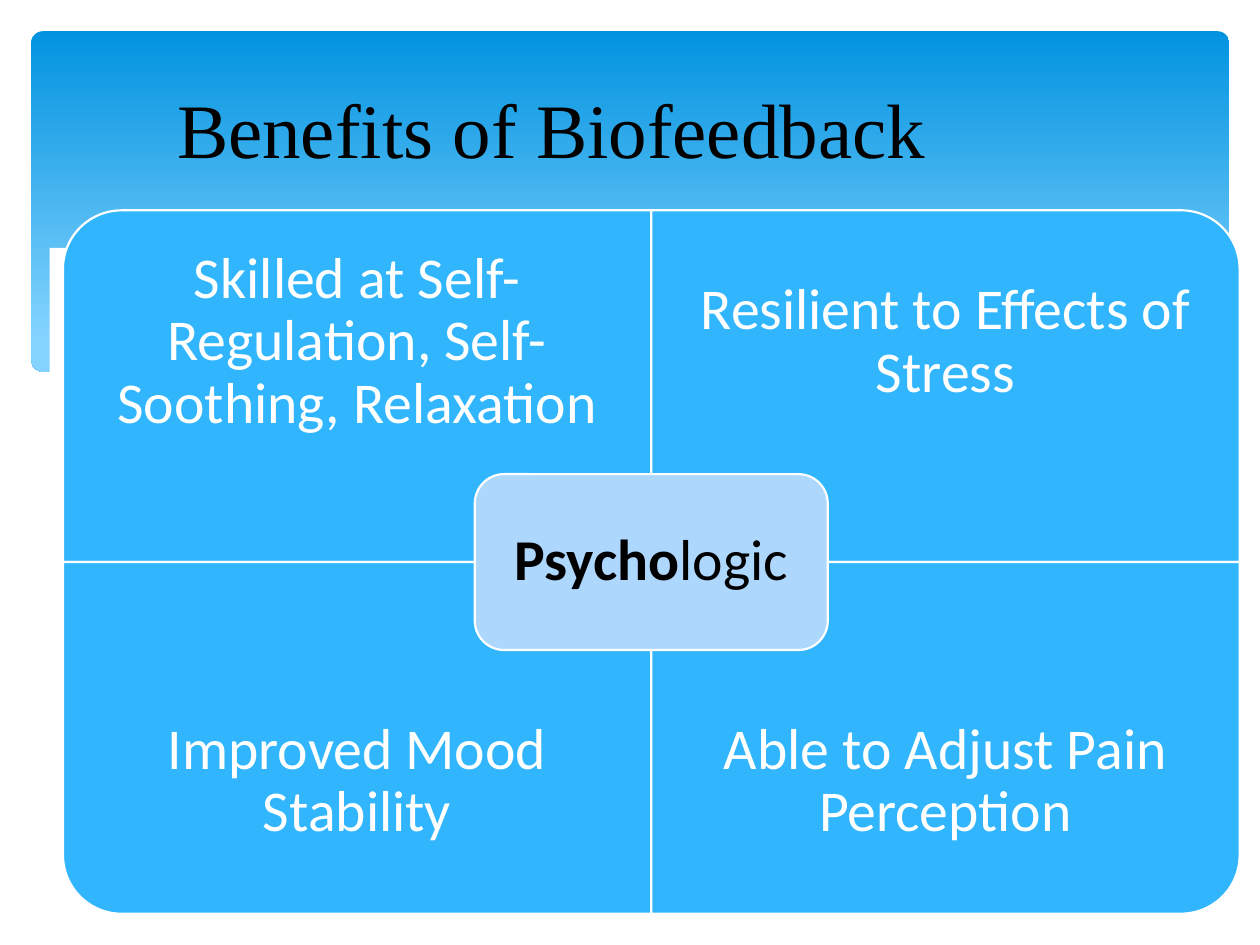
from dataclasses import dataclass

from pptx import Presentation
from pptx import util as u
from pptx.dml.color import RGBColor
from pptx.enum import shapes, text

COLORS = {
    "white": "FFFFFF",
    "black": "000000",
    "banner_top": "0293E0",
    "banner_bottom": "83D3FE",
    "quadrant": "31B6FD",
    "center": "AED7FE",
}
LEFT, TOP = 1.27, 4.24
WIDTH, HEIGHT = 11.86, 7.09
LABEL_HEIGHT = HEIGHT * 0.75
WAVE = [
    (0.58, 5.41), (0.91, 5.26), (1.32, 5.11), (1.9, 4.95), (2.69, 4.8),
    (3.71, 4.7), (4.9, 4.67), (6.35, 4.72), (8, 4.93), (9.93, 5.26),
    (12.07, 5.77), (14.1, 6.22), (15.9, 6.55), (17.98, 6.86), (20.55, 7.04),
    (22.23, 6.93), (23.62, 6.65), (24.82, 6.25), (24.82, 8.36), (0.58, 8.36),
]


@dataclass(frozen=True)
class Quadrant:
    label: str
    column: int
    row: int
    rotation: int


QUADRANTS = [
    Quadrant("Skilled at Self-Regulation, Self-Soothing, Relaxation", 0, 0, 270),
    Quadrant("Resilient to Effects of Stress", 1, 0, 0),
    Quadrant("Improved Mood Stability", 0, 1, 180),
    Quadrant("Able to Adjust Pain Perception", 1, 1, 90),
]


def color(name: str) -> RGBColor:
    return RGBColor.from_string(COLORS[name])


def add_panel(page, kind, left: float, top: float, width: float, height: float, fill: str):
    panel = page.shapes.add_shape(kind, u.Cm(left), u.Cm(top), u.Cm(width), u.Cm(height))
    panel.shadow.inherit = False
    panel.fill.solid()
    panel.fill.fore_color.rgb = color(fill)
    panel.line.color.rgb = color("white")
    panel.line.width = u.Pt(1.25)
    return panel


def add_label(page, spans: list[tuple[str, bool]], left: float, top: float,
              width: float, height: float, inset: float, ink: str) -> None:
    box = page.shapes.add_textbox(u.Cm(left), u.Cm(top), u.Cm(width), u.Cm(height))
    frame = box.text_frame
    frame.word_wrap = True
    frame.vertical_anchor = text.MSO_ANCHOR.MIDDLE
    frame.margin_left = frame.margin_right = u.Cm(inset)
    frame.margin_top = frame.margin_bottom = u.Cm(inset)
    para = frame.paragraphs[0]
    para.alignment = text.PP_ALIGN.CENTER
    para.line_spacing = 0.9
    for words, bold in spans:
        span = para.add_run()
        span.text = words
        span.font.name = "Calibri"
        span.font.size = u.Pt(33)
        span.font.bold = bold
        span.font.color.rgb = color(ink)


def add_quadrant(page, quadrant: Quadrant) -> None:
    left = LEFT + quadrant.column * WIDTH
    top = TOP + quadrant.row * HEIGHT
    sideways = quadrant.rotation % 180 == 90
    width, height = (HEIGHT, WIDTH) if sideways else (WIDTH, HEIGHT)
    panel = add_panel(page, shapes.MSO_SHAPE.ROUND_1_RECTANGLE,
                      left + (WIDTH - width) / 2, top + (HEIGHT - height) / 2,
                      width, height, "quadrant")
    panel.rotation = quadrant.rotation
    label_top = top + quadrant.row * (HEIGHT - LABEL_HEIGHT)
    add_label(page, [(quadrant.label, False)], left, label_top,
              WIDTH, LABEL_HEIGHT, 0.66, "white")


def add_center(page) -> None:
    width, height, inset = WIDTH * 0.6, HEIGHT / 2, 0.17
    left, top = LEFT + WIDTH - width / 2, TOP + HEIGHT - height / 2
    add_panel(page, shapes.MSO_SHAPE.ROUNDED_RECTANGLE, left, top, width, height, "center")
    add_label(page, [("Psycho", True), ("logic", False)], left + inset, top + inset,
              width - 2 * inset, height - 2 * inset, 0.35, "black")


def add_banner(page) -> None:
    banner = add_panel(page, shapes.MSO_SHAPE.ROUNDED_RECTANGLE,
                       0.63, 0.63, 24.15, 6.86, "banner_top")
    banner.adjustments[0] = 0.034
    banner.line.fill.background()
    banner.fill.gradient()
    banner.fill.gradient_angle = 270
    stops = banner.fill.gradient_stops
    for stop, name, position in zip(stops, ("banner_top", "banner_bottom"), (0, 0.9)):
        stop.color.rgb = color(name)
        stop.position = position

    builder = page.shapes.build_freeform(*WAVE[0], scale=u.Cm(1))
    builder.add_line_segments(WAVE[1:], close=True)
    wave = builder.convert_to_shape()
    wave.shadow.inherit = False
    wave.fill.solid()
    wave.fill.fore_color.rgb = color("white")
    wave.line.fill.background()


def format_title(page) -> None:
    title = page.shapes.title
    title.left, title.top = u.Cm(0.64), u.Cm(0.84)
    title.width, title.height = u.Cm(20.96), u.Cm(3.48)
    frame = title.text_frame
    frame.text = "Benefits of Biofeedback"
    frame.auto_size = text.MSO_AUTO_SIZE.NONE
    frame.vertical_anchor = text.MSO_ANCHOR.MIDDLE
    para = frame.paragraphs[0]
    para.alignment = text.PP_ALIGN.CENTER
    font = para.runs[0].font
    font.name = "Times New Roman"
    font.size = u.Pt(44)
    font.color.rgb = color("black")
    title.element.getparent().append(title.element)


def main() -> None:
    deck = Presentation()
    deck.slide_width, deck.slide_height = u.Cm(25.4), u.Cm(19.05)
    page = deck.slides.add_slide(deck.slide_layouts[5])
    add_banner(page)
    format_title(page)
    for quadrant in QUADRANTS:
        add_quadrant(page, quadrant)
    add_center(page)
    deck.save("out.pptx")


if __name__ == "__main__":
    main()
